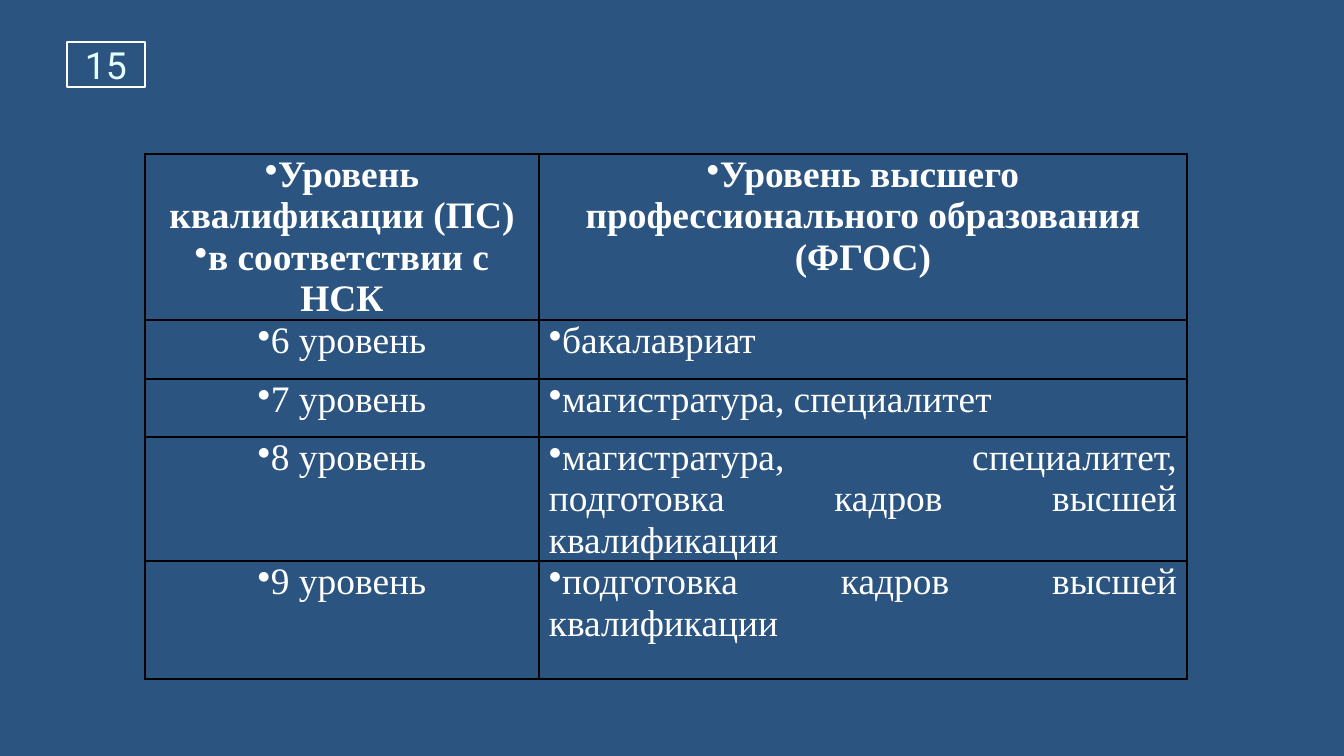
from lxml import etree
from pptx import Presentation
from pptx.dml.color import RGBColor
from pptx.enum.shapes import MSO_SHAPE
from pptx.enum.text import MSO_ANCHOR, PP_ALIGN
from pptx.oxml.ns import qn
from pptx.util import Pt

RECTANGLE = MSO_SHAPE.RECTANGLE
MIDDLE = MSO_ANCHOR.MIDDLE
CENTER, JUSTIFY = PP_ALIGN.CENTER, PP_ALIGN.JUSTIFY
EMU_PER_PX = 914400 / 134.4
BACKGROUND, WHITE, BLACK, NUMBER_COLOR = "2B5481", "FFFFFF", "000000", "E5FFFF"


def px(*lengths):
    return [round(length * EMU_PER_PX) for length in lengths]


def color(hex_value):
    return RGBColor.from_string(hex_value)


presentation = Presentation()
presentation.slide_width, presentation.slide_height = px(1344, 756)
slide = presentation.slides.add_slide(presentation.slide_layouts[6])
slide.background.fill.solid()
slide.background.fill.fore_color.rgb = color(BACKGROUND)

number_box = slide.shapes.add_shape(RECTANGLE, *px(67, 42, 78, 45))
number_box.shadow.inherit = False
number_box.fill.background()
number_box.line.color.rgb = color(WHITE)
number_box.line.width = Pt(0.75)
number_frame = number_box.text_frame
for name in ("margin_left", "margin_right", "margin_top", "margin_bottom"):
    setattr(number_frame, name, 0)
number_frame.vertical_anchor = MIDDLE
paragraph = number_frame.paragraphs[0]
paragraph.alignment = CENTER
run = paragraph.add_run()
run.text = "15"
for name, value in {"size": Pt(20), "name": "Roboto"}.items():
    setattr(run.font, name, value)
run.font.color.rgb = color(NUMBER_COLOR)

rows = [
    (166, ["Уровень квалификации (ПС)", "в соответствии с НСК"],
     ["Уровень высшего профессионального образования (ФГОС)"]),
    (59, ["6 уровень"], ["бакалавриат"]),
    (58, ["7 уровень"], ["магистратура, специалитет"]),
    (124, ["8 уровень"], ["магистратура, специалитет, подготовка кадров высшей квалификации"]),
    (118, ["9 уровень"], ["подготовка кадров высшей квалификации"]),
]
column_widths = px(394, 648)
table_height = sum(row[0] for row in rows)
table = slide.shapes.add_table(len(rows), 2, *px(145, 154, 1042, table_height)).table
table.first_row = False
table.horz_banding = False
for column, width in zip(table.columns, column_widths):
    column.width = width

side_margin, = px(10)
cell_format = {"margin_left": side_margin, "margin_right": side_margin,
               "margin_top": 0, "margin_bottom": 0}
for row_index, (height, *cell_texts) in enumerate(rows):
    table.rows[row_index].height, = px(height)
    is_header = row_index == 0
    font_format = {"size": Pt(20), "name": "Times New Roman", "bold": is_header}
    for column_index, lines in enumerate(cell_texts):
        cell = table.cell(row_index, column_index)
        for name, value in cell_format.items():
            setattr(cell, name, value)
        properties = cell._tc.get_or_add_tcPr()
        for side in ("lnL", "lnR", "lnT", "lnB"):
            border = etree.SubElement(properties, qn(f"a:{side}"), w=str(Pt(1)))
            border_fill = etree.SubElement(border, qn("a:solidFill"))
            etree.SubElement(border_fill, qn("a:srgbClr"), val=BLACK)
        cell.fill.background()
        for line_index, line in enumerate(lines):
            text_frame = cell.text_frame
            paragraph = text_frame.add_paragraph() if line_index else text_frame.paragraphs[0]
            paragraph.alignment = CENTER if is_header or column_index == 0 else JUSTIFY
            paragraph_properties = paragraph._p.get_or_add_pPr()
            for name in ("marL", "indent"):
                paragraph_properties.set(name, "0")
            bullet_color = etree.SubElement(paragraph_properties, qn("a:buClr"))
            etree.SubElement(bullet_color, qn("a:srgbClr"), val=WHITE)
            etree.SubElement(paragraph_properties, qn("a:buChar"), char="•")
            run = paragraph.add_run()
            run.text = line
            for name, value in font_format.items():
                setattr(run.font, name, value)
            run.font.color.rgb = color(WHITE)

presentation.save("out.pptx")
